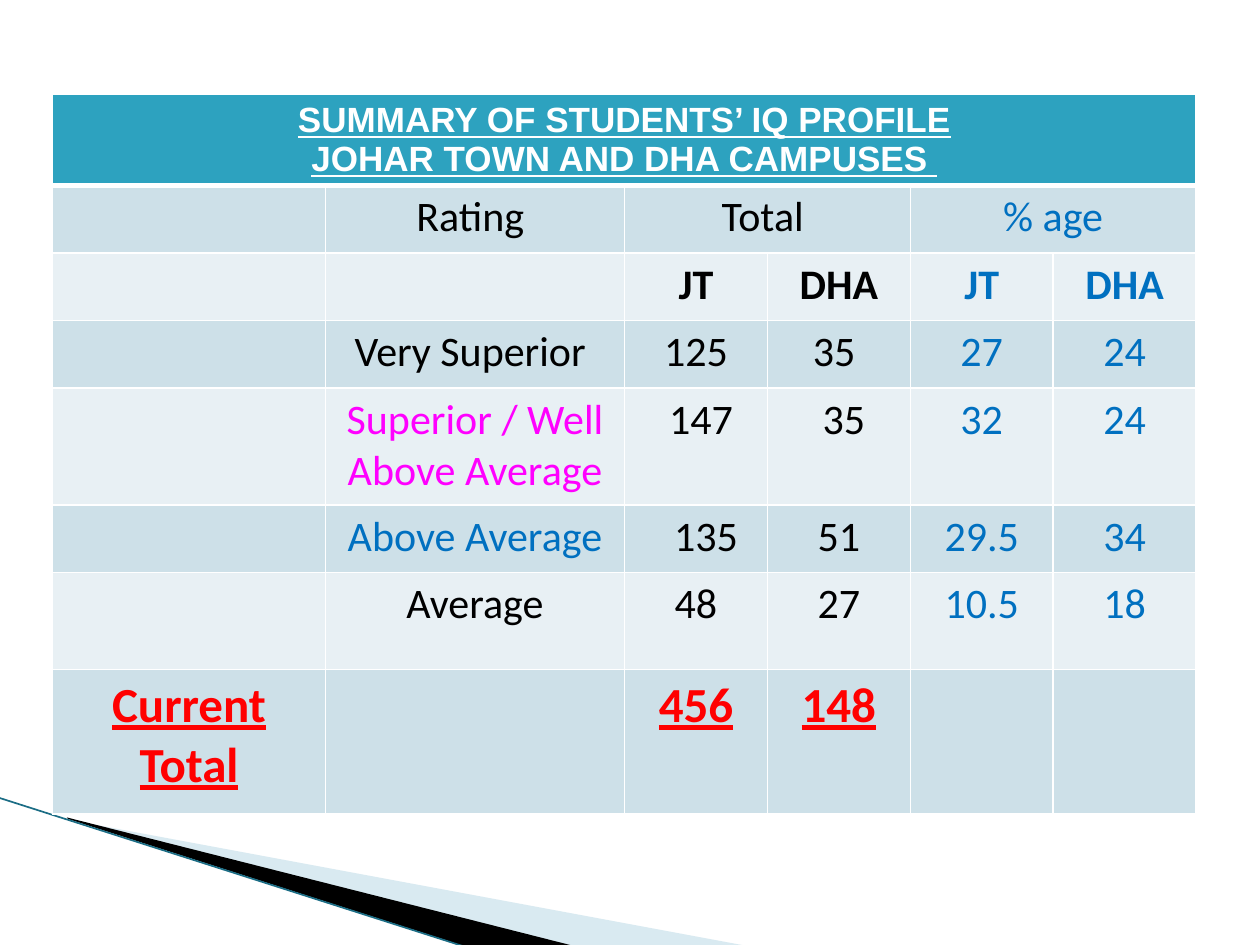
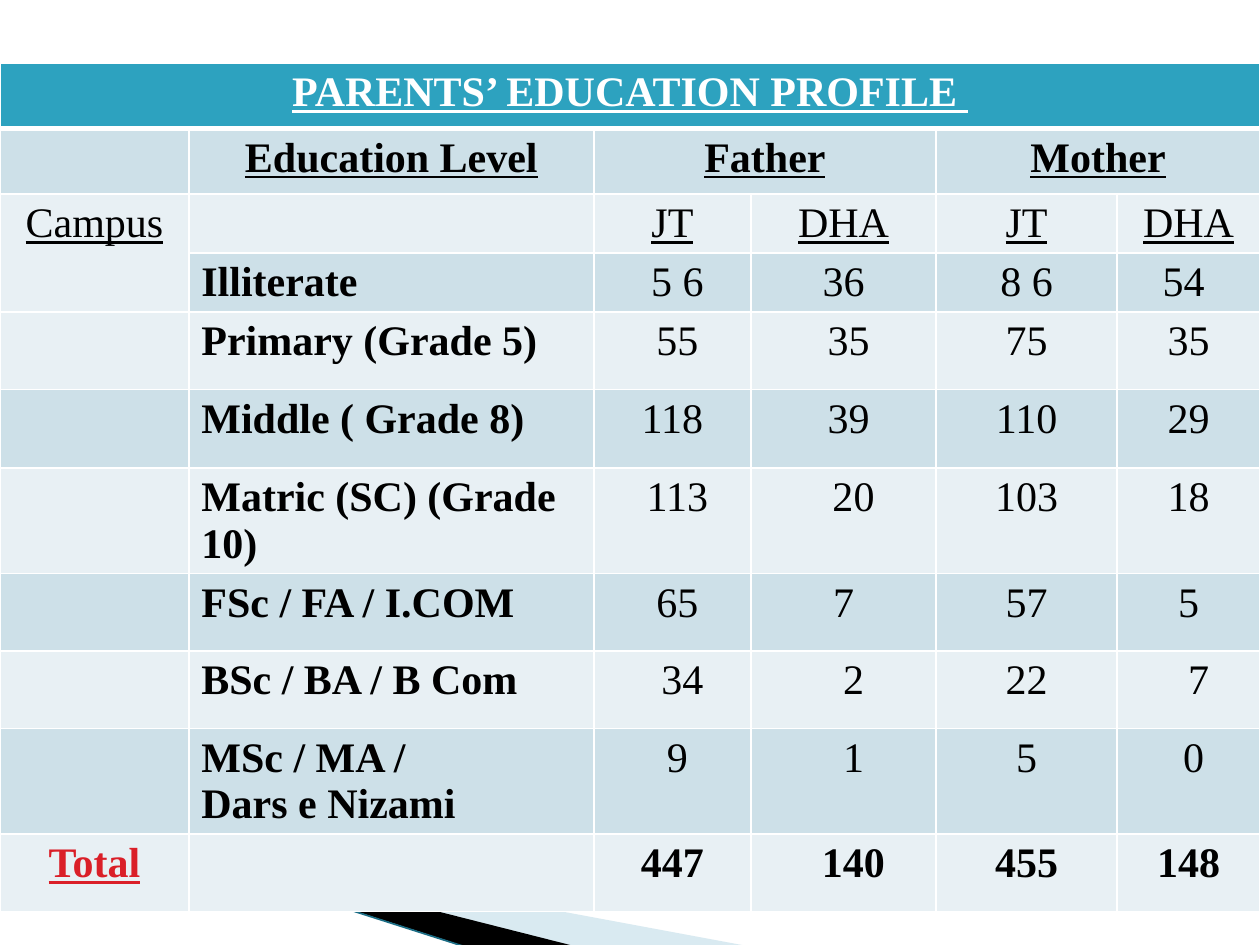
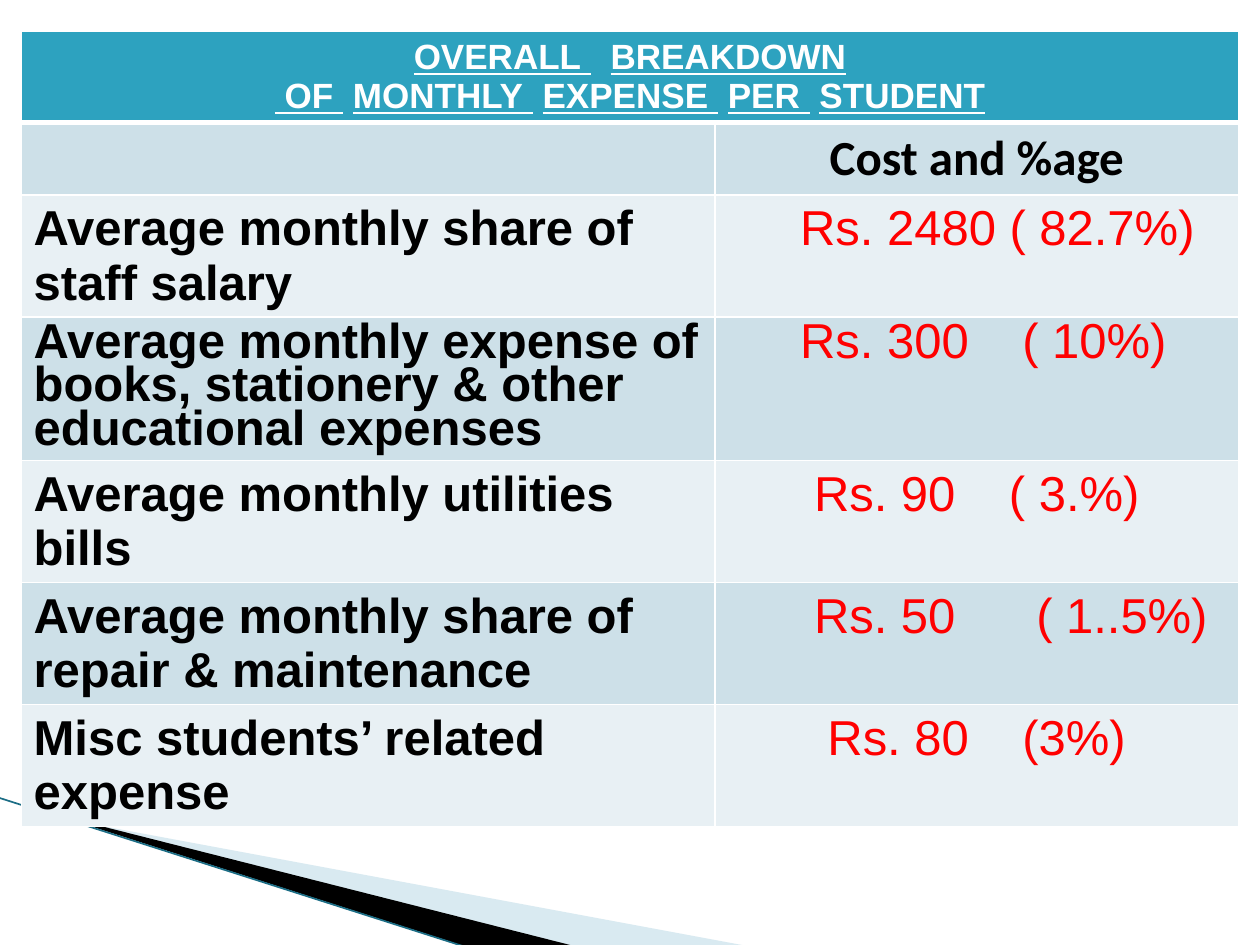
from dataclasses import dataclass, field
from lxml.etree import SubElement
from pptx import Presentation
from pptx.dml.color import RGBColor
from pptx.enum.shapes import MSO_CONNECTOR
from pptx.enum.text import PP_ALIGN
from pptx.oxml.ns import qn
from pptx.util import Cm, Pt


@dataclass
class Style:
    font: str
    size: int
    color: str = "000000"
    bold: bool = False
    underline: bool = False
    align: PP_ALIGN = PP_ALIGN.CENTER


class Theme:
    header = "2DA2BF"
    bands = ("E8F0F4", "CDE0E8")
    border = "FFFFFF"
    wedge_pale = "A0CBDC"
    wedge_dark = "000000"
    edge = "1B6D85"
    margin = 0.25
    styles = {
        "heading": Style("Arial", 20, "FFFFFF", True, True),
        "text": Style("Calibri", 24),
        "strong": Style("Calibri", 24, bold=True),
        "share": Style("Calibri", 24, "0070C0"),
        "share_head": Style("Calibri", 24, "0070C0", True),
        "accent": Style("Calibri", 24, "FF00FF"),
        "sum": Style("Calibri", 28, "FF0000", True, True),
        "serif_heading": Style("Times New Roman", 24, "FFFFFF", True, True),
        "parent": Style("Times New Roman", 24, bold=True, underline=True),
        "campus": Style("Times New Roman", 24, underline=True),
        "level": Style("Times New Roman", 24, bold=True, align=PP_ALIGN.LEFT),
        "count": Style("Times New Roman", 24),
        "count_sum": Style("Times New Roman", 24, bold=True),
        "total": Style("Times New Roman", 24, "DA1F28", True, True),
        "cost_head": Style("Calibri", 28, bold=True),
        "expense": Style("Arial", 28, bold=True, align=PP_ALIGN.LEFT),
        "cost": Style("Arial", 28, "FF0000", align=PP_ALIGN.LEFT),
    }


@dataclass
class TableData:
    left: float
    top: float
    widths: list
    heights: list
    rows: list
    merges: list
    insets: dict = field(default_factory=dict)
    tabs: dict = field(default_factory=dict)
    tight_rows: tuple = ()
    heading_gaps: tuple = ()


iq = TableData(
    1.06, 1.91, [5.5, 6.03] + [2.88] * 4,
    [1.8, 1.36, 1.36, 1.36, 2.36, 1.36, 1.96, 2.91],
    [
        ("heading", ["SUMMARY OF STUDENTS’ IQ PROFILE\vJOHAR TOWN AND DHA CAMPUSES "]),
        ("text text text text share share", ["", "Rating ", "Total ", "", "% age"]),
        ("text text strong strong share_head share_head", ["", "", "JT", "DHA", "JT", "DHA"]),
        ("text text text text share share", ["", "Very Superior ", "125", "35 ", "27", "24"]),
        ("text accent text text share share",
         ["", "Superior / Well Above Average", "147", "35", "32", "24"]),
        ("text share text text share share", ["", "Above Average", "135", "51", "29.5", "34"]),
        ("text text text text share share", ["", "Average", "48", "27", "10.5", "18"]),
        ("sum sum sum sum", ["Current Total", "", "456", "148"]),
    ],
    [(0, 0, 0, 5), (1, 2, 1, 3), (1, 4, 1, 5)],
    {(4, 2): 0.2, (4, 3): 0.2, (5, 2): 0.4},
)

level_row = "level level count count count count"
education = TableData(
    0, 1.27, [3.81, 8.16, 3.17, 3.73, 3.65, 2.88],
    [1.32, 1.32, 1.17, 1.17, 1.56, 1.58, 2.13, 1.56, 1.56, 2.13, 1.56],
    [
        ("serif_heading", ["PARENTS’ EDUCATION PROFILE "]),
        ("parent parent parent parent parent", ["", "Education Level", "Father", "", "Mother"]),
        ("campus campus campus campus campus campus", ["Campus", "", "JT", "DHA", "JT", "DHA"]),
        (level_row, ["", "Illiterate", "5 6", "36", "8 6", "54"]),
        (level_row, ["", "Primary (Grade 5)", "55", "35", "75", "35"]),
        (level_row, ["", "Middle ( Grade 8)", "118", "39", "110", "29"]),
        (level_row, ["", "Matric (SC) (Grade 10)", "113", "20", "103", "18"]),
        (level_row, ["", "FSc / FA / I.COM", "65", "7", "57", "5"]),
        (level_row, ["", "BSc / BA / B Com", "34", "2", "22", "7"]),
        (level_row, ["", "MSc / MA /\vDars e Nizami", "9", "1", "5", "0"]),
        ("total level count_sum count_sum count_sum count_sum",
         ["Total", "", "447", "140", "455", "148"]),
    ],
    [(0, 0, 0, 5), (1, 2, 1, 3), (1, 4, 1, 5), (2, 0, 3, 0)],
    {(3, 2): 0.2, (3, 5): -0.2, (4, 2): 0.2, (4, 3): 0.2, (5, 3): 0.2,
     (6, 2): 0.2, (6, 3): 0.4, (7, 2): 0.2, (8, 2): 0.4, (8, 3): 0.4,
     (8, 5): 0.4, (9, 2): 0.2, (9, 3): 0.4, (9, 5): 0.2, (10, 3): 0.4},
)

expenses = TableData(
    0.43, 0.64, [13.98, 10.56],
    [1.8, 1.45, 2.44, 2.9, 2.45, 2.45, 2.44],
    [
        ("heading", ["OVERALL BREAKDOWN\n OF MONTHLY EXPENSE PER STUDENT"]),
        ("expense cost_head", ["", "Cost and %age"]),
        ("expense cost", ["Average monthly share of staff salary", "Rs. 2480 ( 82.7%)"]),
        ("expense cost",
         ["Average monthly expense of\nbooks, stationery & other\neducational expenses",
          "Rs. 300\t( 10%)"]),
        ("expense cost", ["Average monthly utilities bills", "Rs. 90\t( 3.%)"]),
        ("expense cost", ["Average monthly share of repair & maintenance", "Rs. 50\t( 1..5%)"]),
        ("expense cost", ["Misc students’ related expense", "Rs. 80\t(3%)"]),
    ],
    [(0, 0, 0, 1)],
    {(2, 1): 1.47, (3, 1): 1.47, (4, 1): 1.75, (5, 1): 1.75, (6, 1): 2.02},
    {(3, 1): 4.48, (4, 1): 3.93, (5, 1): 4.48, (6, 1): 3.93},
    (3,),
    (11.1, 5.6),
)


def add_wedge(s, points, frame, color):
    corners = [(Cm(x), Cm(y)) for x, y in points]
    fb = s.shapes.build_freeform(*corners[0])
    fb.add_line_segments(corners[1:], close=True)
    sp = fb.convert_to_shape()
    left, top, width, height = [Cm(v) for v in frame]
    outline = sp._element.find(".//" + qn("a:path"))
    for pt in outline.iter(qn("a:pt")):
        pt.set("x", str(int(pt.get("x")) + sp.left - left))
        pt.set("y", str(int(pt.get("y")) + sp.top - top))
    outline.set("w", str(width))
    outline.set("h", str(height))
    sp.left, sp.top, sp.width, sp.height = left, top, width, height
    sp.shadow.inherit = False
    sp.fill.solid()
    sp.fill.fore_color.rgb = RGBColor.from_string(color)
    sp.line.fill.background()
    return sp


def format_cell(cell, r):
    tcPr = cell._tc.get_or_add_tcPr()
    for side in ("L", "R", "T", "B"):
        thick = (r, side) in ((0, "B"), (1, "T"))
        ln = SubElement(tcPr, qn(f"a:ln{side}"), w=str(Pt(3 if thick else 1)))
        SubElement(SubElement(ln, qn("a:solidFill")), qn("a:srgbClr"), val=Theme.border)
    cell.fill.solid()
    color = Theme.bands[r % 2] if r else Theme.header
    cell.fill.fore_color.rgb = RGBColor.from_string(color)


prs = Presentation()
prs.slide_width, prs.slide_height = Cm(25.4), Cm(19.05)

for data in (iq, education, expenses):
    s = prs.slides.add_slide(prs.slide_layouts[6])

    pale = add_wedge(s, [(1.4, 16.53), (15.11, 19.08), (11.58, 19.08), (1.4, 16.51)],
                     (1.98, 13.89, 10.57, 4.01), Theme.wedge_pale)
    SubElement(pale.fill._xPr.find(".//" + qn("a:srgbClr")), qn("a:alpha"), val="40000")
    add_wedge(s, [(1.35, 16.48), (11.61, 19.08), (9.45, 19.1), (1.37, 16.51)],
              (-0.15, 16.08, 10.57, 2.34), Theme.wedge_dark)
    edge = s.shapes.add_connector(
        MSO_CONNECTOR.STRAIGHT, Cm(-0.03), Cm(16.08), Cm(9.42), Cm(19.1))
    edge.line.color.rgb = RGBColor.from_string(Theme.edge)
    edge.line.width = Pt(0.95)
    SubElement(edge._element.spPr, qn("a:effectLst"))

    table = s.shapes.add_table(
        len(data.heights), len(data.widths), Cm(data.left), Cm(data.top),
        Cm(sum(data.widths)), Cm(sum(data.heights))).table
    for column, width in zip(table.columns, data.widths):
        column.width = Cm(width)
    for r, height in enumerate(data.heights):
        table.rows[r].height = Cm(height)
        for cell in table.rows[r].cells:
            format_cell(cell, r)
    for r1, c1, r2, c2 in data.merges:
        table.cell(r1, c1).merge(table.cell(r2, c2))

    for r, (names, texts) in enumerate(data.rows):
        for c, (name, text) in enumerate(zip(names.split(), texts)):
            if not text:
                continue
            cell = table.cell(r, c)
            style = Theme.styles[name]
            inset = data.insets.get((r, c), 0)
            cell.margin_left = Cm(Theme.margin + max(inset, 0))
            cell.margin_right = Cm(Theme.margin + max(-inset, 0))
            cell.text_frame.text = text
            if r == 0:
                for p, gap in zip(cell.text_frame.paragraphs, data.heading_gaps):
                    words = p.text.split(" ")
                    p.clear()
                    for i, word in enumerate(words):
                        if i:
                            space = p.add_run()
                            space.text = " "
                            if words[i - 1]:
                                space.font._element.set("spc", str(round(gap * 100)))
                        if word:
                            p.add_run().text = word
            for p in cell.text_frame.paragraphs:
                p.alignment = style.align
                if r in data.tight_rows:
                    p.line_spacing = 0.8
                if (r, c) in data.tabs:
                    tabs = SubElement(p._p.get_or_add_pPr(), qn("a:tabLst"))
                    SubElement(tabs, qn("a:tab"), pos=str(Cm(data.tabs[r, c])), algn="l")
                for run in p.runs:
                    font = run.font
                    font.name = style.font
                    font.size = Pt(style.size)
                    font.bold = style.bold
                    font.underline = style.underline
                    font.color.rgb = RGBColor.from_string(style.color)

prs.save("out.pptx")
